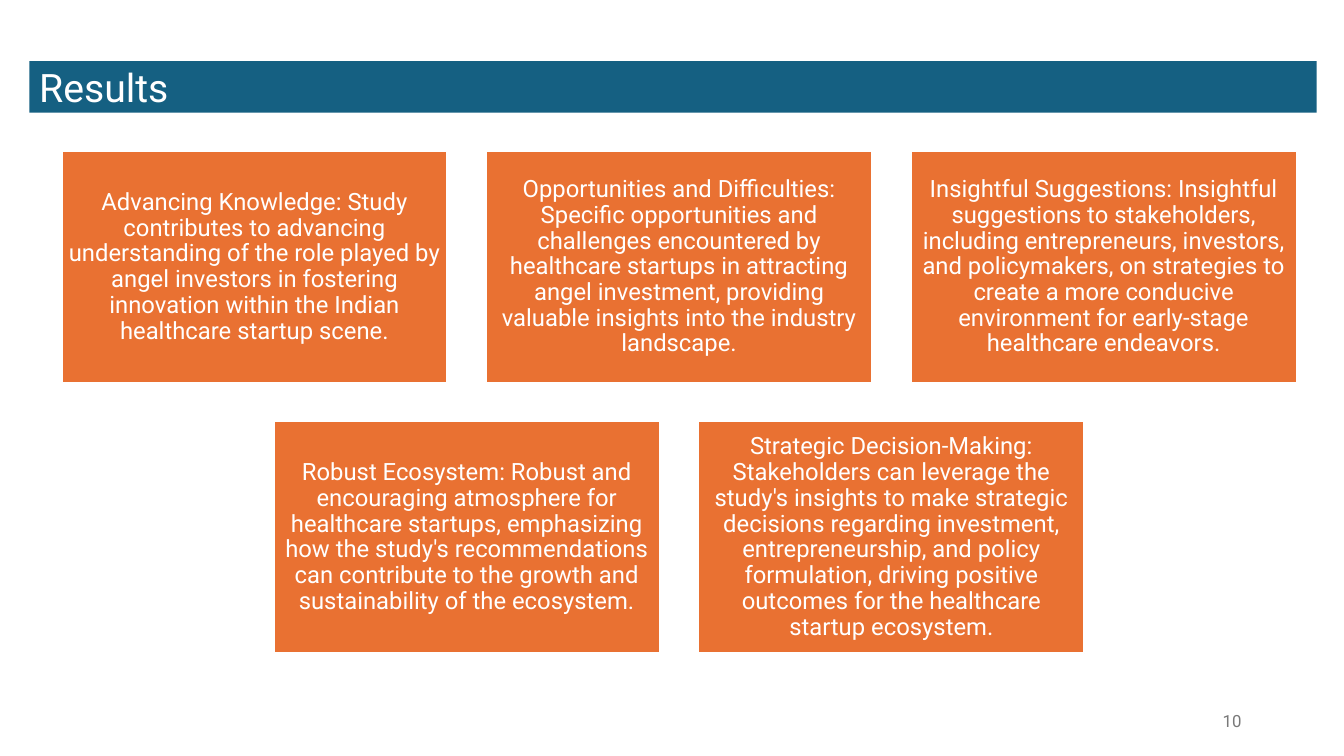
from pptx import Presentation
from pptx.dml.color import RGBColor
from pptx.enum.shapes import MSO_SHAPE
from pptx.enum.text import MSO_ANCHOR, PP_ALIGN
from pptx.util import Cm, Pt

RECT = MSO_SHAPE.RECTANGLE
MIDDLE = MSO_ANCHOR.MIDDLE
LEFT, CENTER, RIGHT = PP_ALIGN.LEFT, PP_ALIGN.CENTER, PP_ALIGN.RIGHT

TITLE = "Results"
PAGE_NUMBER = "10"
CARD_ROWS = [
    [
        "Advancing Knowledge: Study contributes to advancing understanding of the role "
        "played by angel investors in fostering innovation within the Indian healthcare "
        "startup scene.",
        "Opportunities and Difficulties: Specific opportunities and challenges encountered "
        "by healthcare startups in attracting angel investment, providing valuable insights "
        "into the industry landscape.",
        "Insightful Suggestions: Insightful suggestions to stakeholders, including "
        "entrepreneurs, investors, and policymakers, on strategies to create a more "
        "conducive environment for early-stage healthcare endeavors.",
    ],
    [
        "Robust Ecosystem: Robust and encouraging atmosphere for healthcare startups, "
        "emphasizing how the study's recommendations can contribute to the growth and "
        "sustainability of the ecosystem.",
        "Strategic Decision-Making: Stakeholders can leverage the study's insights to make "
        "strategic decisions regarding investment, entrepreneurship, and policy formulation, "
        "driving positive outcomes for the healthcare startup ecosystem.",
    ],
]

COLORS = {"bar": "156082", "card": "E97132", "white": "FFFFFF", "number": "797979"}
FONT = "Roboto"
GRID_LEFT, GRID_TOP = 1.55, 3.81
CARD_W, CARD_H, GAP = 9.73, 5.84, 0.97
CARD_INSET = Cm(0.18)

TITLE_FORMAT = {"alignment": LEFT, "space_before": Pt(6), "space_after": Pt(6)}
CARD_FORMAT = {"alignment": CENTER, "line_spacing": 0.9}
NUMBER_FORMAT = {"alignment": RIGHT}
CARD_MARGINS = {
    f"margin_{side}": CARD_INSET for side in ("left", "top", "right", "bottom")
}


def color(name):
    return RGBColor.from_string(COLORS[name])


def set_all(target, values):
    for name, value in values.items():
        setattr(target, name, value)


def write(sp, text, size, ink, paragraph_format, margins={}):
    tf = sp.text_frame
    set_all(tf, {"word_wrap": True, "vertical_anchor": MIDDLE, **margins})
    p = tf.paragraphs[0]
    set_all(p, paragraph_format)
    r = p.add_run()
    r.text = text
    set_all(r.font, {"name": FONT, "size": Pt(size)})
    r.font.color.rgb = color(ink)


def add_box(s, left, top, width, height, fill):
    sp = s.shapes.add_shape(RECT, Cm(left), Cm(top), Cm(width), Cm(height))
    sp.shadow.inherit = False
    sp.fill.solid()
    sp.fill.fore_color.rgb = color(fill)
    sp.line.fill.background()
    return sp


def main():
    prs = Presentation()
    set_all(prs, {"slide_width": Cm(33.87), "slide_height": Cm(19.05)})
    s = prs.slides.add_slide(prs.slide_layouts[6])

    number = s.shapes.add_textbox(Cm(23.92), Cm(17.66), Cm(7.62), Cm(1.01))
    write(number, PAGE_NUMBER, 12, "number", NUMBER_FORMAT)

    bar = add_box(s, 0.74, 1.54, 32.44, 1.3, "bar")
    write(bar, TITLE, 28, "white", TITLE_FORMAT)

    columns = max(len(row) for row in CARD_ROWS)
    for i, row in enumerate(CARD_ROWS):
        indent = (columns - len(row)) * (CARD_W + GAP) / 2
        top = GRID_TOP + i * (CARD_H + GAP)
        for j, text in enumerate(row):
            left = GRID_LEFT + indent + j * (CARD_W + GAP)
            card = add_box(s, left, top, CARD_W, CARD_H, "card")
            card.line.color.rgb = color("white")
            card.line.width = Pt(1.5)
            write(card, text, 17, "white", CARD_FORMAT, CARD_MARGINS)

    prs.save("out.pptx")


if __name__ == "__main__":
    main()
